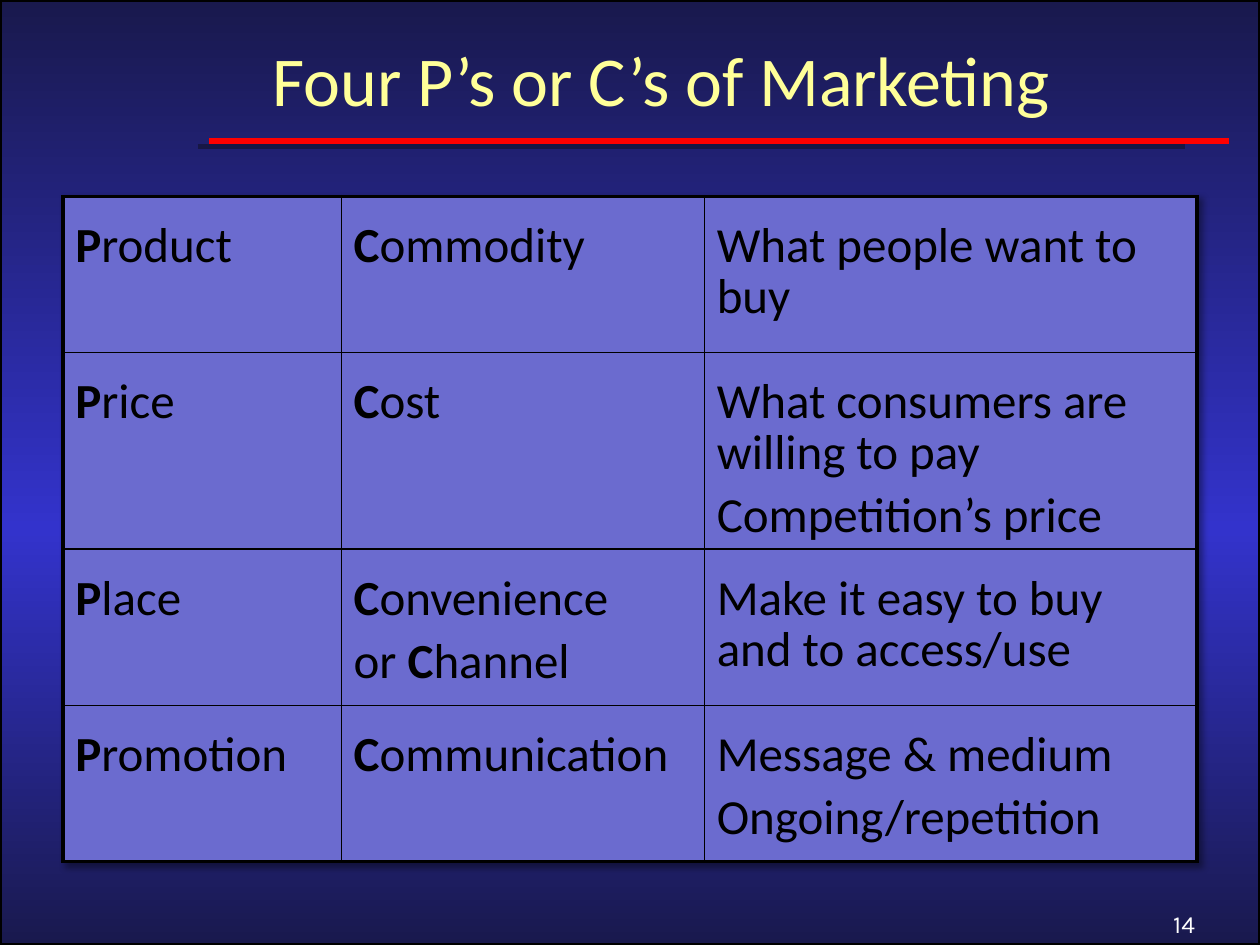
"""Build a slide with a table of the four P's and C's of marketing."""
from lxml.etree import SubElement
from pptx import Presentation
from pptx.dml.color import RGBColor
from pptx.enum.shapes import MSO_CONNECTOR, MSO_SHAPE
from pptx.enum.text import MSO_ANCHOR, PP_ALIGN
from pptx.oxml import parse_xml
from pptx.oxml.ns import nsdecls, qn
from pptx.util import Cm, Pt

NAVY = RGBColor(0x19, 0x19, 0x4D)
BLUE = RGBColor(0x33, 0x33, 0xCC)
LILAC = RGBColor(0x6B, 0x6B, 0xCF)
SHADE = RGBColor(0x17, 0x17, 0x45)
RED = RGBColor(0xFF, 0x00, 0x00)
YELLOW = RGBColor(0xFF, 0xFF, 0x99)
WHITE = RGBColor(0xFF, 0xFF, 0xFF)
BLACK = RGBColor(0x00, 0x00, 0x00)

TITLE = "Four P’s or C’s of Marketing"
PAGE = "14"
BACKDROP = [(0, NAVY), (56, BLUE), (100, NAVY)]
RULES = [(3.99, 23.88, 2.95, SHADE), (4.22, 24.77, 2.84, RED)]
COLUMNS = [5.61, 7.32, 9.93]
HEIGHTS = [3.15, 3.96, 3.15, 3.15]
ROWS = [
    [["*P*roduct"], ["*C*ommodity"], ["What people want to buy"]],
    [["*P*rice"], ["*C*ost"],
     ["What consumers are willing to pay", "Competition’s price"]],
    [["*P*lace"], ["*C*onvenience", "or *C*hannel"],
     ["Make it easy to buy and to access/use"]],
    [["*P*romotion"], ["*C*ommunication"],
     ["Message & medium", "Ongoing/repetition"]],
]


def shadow_effect(blur, distance, alpha):
    return parse_xml(
        f'<a:effectLst {nsdecls("a")}><a:outerShdw blurRad="{Pt(blur)}" '
        f'dist="{Pt(distance)}" dir="2700000" algn="tl" rotWithShape="0">'
        f'<a:srgbClr val="{BLACK}"><a:alpha val="{alpha}000"/></a:srgbClr>'
        '</a:outerShdw></a:effectLst>')


def paint_background(s):
    fill = s.background.fill
    fill.gradient()
    fill.gradient_angle = 270
    stops = fill._fill._gradFill.find(qn("a:gsLst"))
    stops.clear()
    for percent, color in BACKDROP:
        stop = SubElement(stops, qn("a:gs"), pos=str(percent * 1000))
        SubElement(stop, qn("a:srgbClr"), val=str(color))


def add_rule(s, left, right, y, color):
    line = s.shapes.add_connector(
        MSO_CONNECTOR.STRAIGHT, Cm(left), Cm(y), Cm(right), Cm(y))
    line.line.color.rgb = color
    line.line.width = Pt(3)
    SubElement(line._element.spPr, qn("a:effectLst"))


def add_frame(s, prs):
    sp = s.shapes.add_shape(
        MSO_SHAPE.RECTANGLE, 0, 0, prs.slide_width, prs.slide_height)
    sp.shadow.inherit = False
    sp.fill.background()
    sp.line.color.rgb = BLACK
    sp.line.width = Pt(2)


def style_font(font, name, size, color):
    font.name = name
    font.size = Pt(size)
    font.color.rgb = color


def add_label(s, text, box, align, name, size, color):
    tf = s.shapes.add_textbox(*map(Cm, box)).text_frame
    tf.word_wrap = True
    tf.text = text
    p = tf.paragraphs[0]
    p.alignment = align
    style_font(p.runs[0].font, name, size, color)
    return tf


def add_title(s):
    tf = add_label(s, TITLE, (1.9, 0.2, 22.86, 3.18),
                   PP_ALIGN.CENTER, "Calibri", 40, YELLOW)
    tf.vertical_anchor = MSO_ANCHOR.MIDDLE
    p = tf.paragraphs[0]
    p.line_spacing = Pt(36)
    fill = p.runs[0].font._element.find(qn("a:solidFill"))
    fill.addnext(shadow_effect(0, 3, 100))


def set_borders(cell, outer):
    tc_pr = cell._tc.get_or_add_tcPr()
    for side in "LRTB":
        width = Pt(2.25 if side in outer else 1)
        ln = SubElement(tc_pr, qn(f"a:ln{side}"), w=str(width))
        fill = SubElement(ln, qn("a:solidFill"))
        SubElement(fill, qn("a:srgbClr"), val=str(BLACK))


def fill_cell(cell, lines):
    cell.margin_left = cell.margin_right = Cm(0.25)
    cell.margin_top, cell.margin_bottom = Cm(0.51), Cm(0.13)
    cell.fill.solid()
    cell.fill.fore_color.rgb = LILAC
    tf = cell.text_frame
    for i, line in enumerate(lines):
        p = tf.add_paragraph() if i else tf.paragraphs[0]
        p.line_spacing = 0.85
        p.space_before = Pt(4.2 if i else 0)
        p.space_after = Pt(2.8)
        for j, part in enumerate(line.split("*")):
            if part:
                r = p.add_run()
                r.text = part
                style_font(r.font, "Calibri", 28, BLACK)
                r.font.bold = j % 2 == 1


def add_marketing_table(s):
    table = s.shapes.add_table(
        len(ROWS), len(COLUMNS), Cm(1.27), Cm(3.96),
        Cm(sum(COLUMNS)), Cm(sum(HEIGHTS))).table
    table.first_row = table.horz_banding = False
    table._tbl.tblPr.insert(0, shadow_effect(4, 3, 40))
    for column, width in zip(table.columns, COLUMNS):
        column.width = Cm(width)
    for i, (height, row) in enumerate(zip(HEIGHTS, ROWS)):
        table.rows[i].height = Cm(height)
        for j, lines in enumerate(row):
            edges = {"L": j == 0, "R": j == len(COLUMNS) - 1,
                     "T": i == 0, "B": i == len(ROWS) - 1}
            cell = table.cell(i, j)
            set_borders(cell, [side for side in edges if edges[side]])
            fill_cell(cell, lines)


def main():
    prs = Presentation()
    prs.slide_width, prs.slide_height = Cm(25.4), Cm(19.05)
    s = prs.slides.add_slide(prs.slide_layouts[6])
    paint_background(s)
    for rule in RULES:
        add_rule(s, *rule)
    add_frame(s, prs)
    add_title(s)
    add_marketing_table(s)
    add_label(s, PAGE, (18.42, 18.21, 5.92, 0.69),
              PP_ALIGN.RIGHT, "Karla", 14, WHITE)
    prs.save("out.pptx")


if __name__ == "__main__":
    main()
